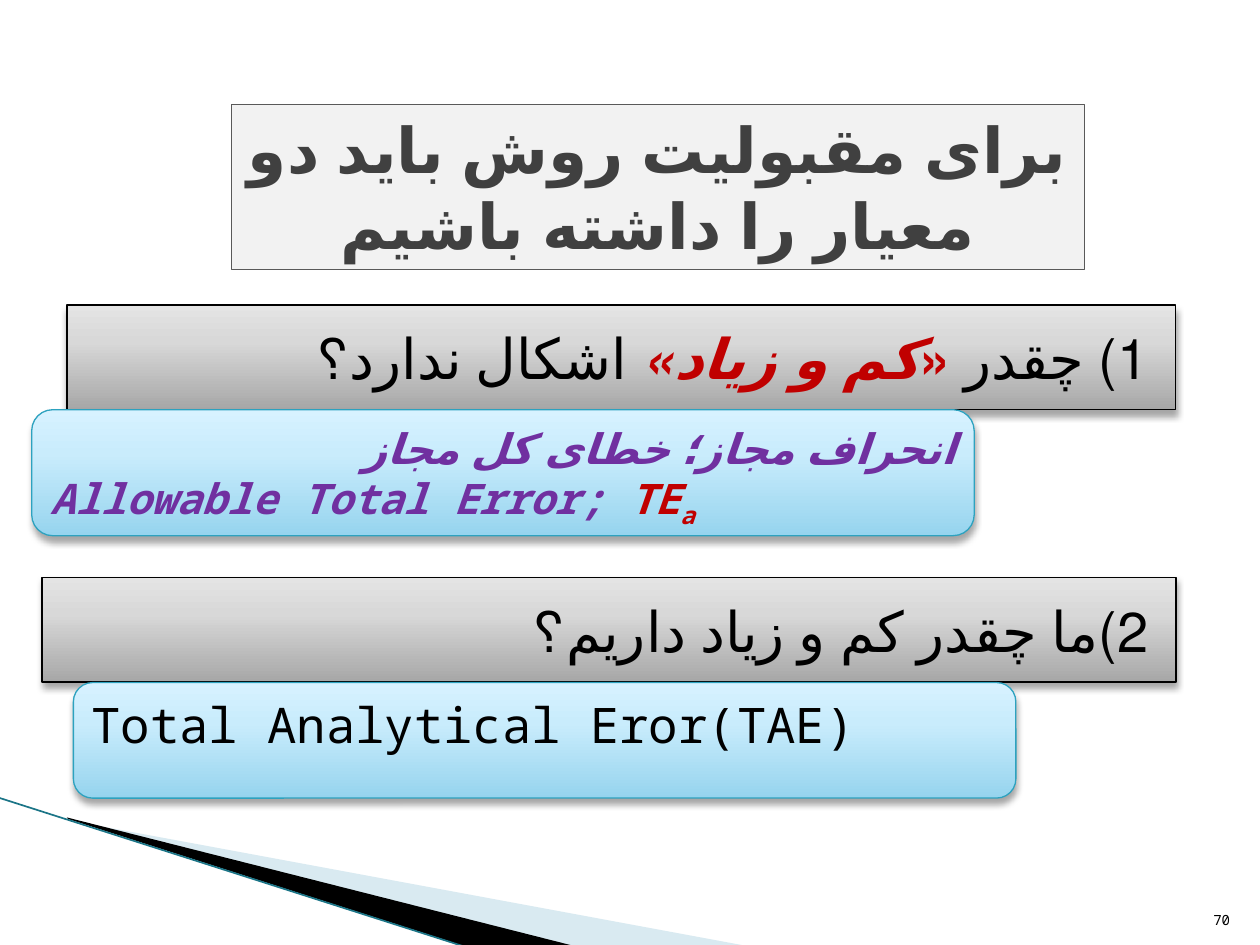
from copy import deepcopy

from lxml import etree
from pptx import Presentation
from pptx import util as u
from pptx.dml import color as dml
from pptx.enum import shapes, text
from pptx.oxml import ns

Cm = u.Cm
FONT = "Noto Sans Mono"
HEX = {
    "black": "000000", "red": "C00000", "purple": "7030A0", "dark": "404040",
    "edge": "595959", "pale": "F2F2F2", "teal": "2DA2BF", "sky": "A0CBDC",
    "line": "1B7587",
}
GRAY = [(0, "A7A7A7"), (0.65, "D8D8D8"), (1, "E4E4E4")]
BLUE = [(0, "96D4EE"), (0.65, "C9ECFC"), (1, "D7F2FF")]
LEFT, RIGHT, MID = text.PP_ALIGN.LEFT, text.PP_ALIGN.RIGHT, text.PP_ALIGN.CENTER
TOP, CENTER, BASE = (text.MSO_ANCHOR.TOP, text.MSO_ANCHOR.MIDDLE,
                     text.MSO_ANCHOR.BOTTOM)


def rgb(name):
    return dml.RGBColor.from_string(HEX[name])


def add_tag(parent, tag, **attrs):
    return etree.SubElement(parent, ns.qn(tag), attrs)


def place(shape, box):
    shape.left, shape.top, shape.width, shape.height = map(Cm, box)


def outline(shape, name):
    shape.line.color.rgb = rgb(name)
    shape.line.width = u.Pt(0.75)


def shade(shape, stops, edge):
    shape.fill.gradient()
    shape.fill.gradient_angle = 90
    items = shape._element.spPr.find(ns.qn("a:gradFill")).find(ns.qn("a:gsLst"))
    items.append(deepcopy(items[0]))
    for stop, (spot, tone) in zip(shape.fill.gradient_stops, stops):
        stop.position = spot
        stop.color.rgb = dml.RGBColor.from_string(tone)
    outline(shape, edge)
    shape.shadow.inherit = False
    effects = shape._element.spPr.find(ns.qn("a:effectLst"))
    cast = add_tag(effects, "a:outerShdw", blurRad="50800", dist="38100",
                   dir="5400000", rotWithShape="0")
    tone = add_tag(cast, "a:srgbClr", val=HEX["black"])
    add_tag(tone, "a:alpha", val="35000")


def set_frame(shape, anchor):
    frame = shape.text_frame
    frame.word_wrap = True
    frame.auto_size = text.MSO_AUTO_SIZE.NONE
    frame.vertical_anchor = anchor
    return frame


def write(para, runs, size, align, rtl=True, indent=0):
    props = para._p.get_or_add_pPr()
    props.set("marL", str(Cm(indent)))
    props.set("indent", "0")
    props.set("rtl", str(int(rtl)))
    add_tag(props, "a:buNone")
    para.alignment = align
    para.space_before = u.Pt(0)
    for words, tone, bold, slant in runs:
        run = para.add_run()
        run.text = words
        font = run.font
        font.name, font.size = FONT, u.Pt(size)
        font.bold, font.italic = bold, slant
        font.color.rgb = rgb(tone)
        font._element.set("lang", "fa-IR" if rtl else "en-US")


def add_box(slide, kind, box):
    return slide.shapes.add_shape(kind, *map(Cm, box))


def add_wedge(slide, points, tone, alpha=None):
    spots = [(Cm(x), Cm(y)) for x, y in points]
    maker = slide.shapes.build_freeform(*spots[0])
    maker.add_line_segments(spots[1:], close=True)
    wedge = maker.convert_to_shape()
    wedge.shadow.inherit = False
    wedge.fill.solid()
    wedge.fill.fore_color.rgb = rgb(tone)
    wedge.line.fill.background()
    if alpha:
        mark = wedge._element.spPr.find(ns.qn("a:solidFill"))[0]
        add_tag(mark, "a:alpha", val=str(alpha * 1000))


def add_corner(slide):
    add_wedge(slide, [(1.4, 16.54), (15.11, 19.08), (11.58, 19.08), (1.4, 16.51)],
              "sky", 40)
    add_wedge(slide, [(1.35, 16.48), (11.61, 19.08), (9.45, 19.1), (1.37, 16.51)],
              "black")
    ends = map(Cm, (-0.03, 16.08, 9.42, 19.1))
    line = slide.shapes.add_connector(shapes.MSO_CONNECTOR.STRAIGHT, *ends)
    line.line.color.rgb = rgb("line")
    line.line.width = u.Pt(0.95)
    add_tag(line._element.spPr, "a:effectLst")


def set_title(slide):
    title = slide.shapes.title
    place(title, (4.66, 2.11, 17.2, 3.33))
    title.fill.solid()
    title.fill.fore_color.rgb = rgb("pale")
    outline(title, "edge")
    words = "برای مقبولیت روش باید دو معیار را داشته باشیم"
    write(set_frame(title, TOP).paragraphs[0],
          [(words, "dark", True, False)], 36, MID)


def add_bar(bar, runs):
    shade(bar, GRAY, "black")
    write(set_frame(bar, CENTER).paragraphs[0], runs, 32, RIGHT, indent=0.3)


def add_card(slide, box):
    card = add_box(slide, shapes.MSO_SHAPE.ROUNDED_RECTANGLE, box)
    shade(card, BLUE, "teal")
    return set_frame(card, TOP)


def add_number(slide):
    box = slide.shapes.add_textbox(*map(Cm, (24.03, 17.81, 1.02, 1.02)))
    write(set_frame(box, BASE).paragraphs[0],
          [("70", "black", False, False)], 8, RIGHT, rtl=False)


def main():
    deck = Presentation()
    deck.slide_width, deck.slide_height = Cm(25.4), Cm(19.05)
    slide = deck.slides.add_slide(deck.slide_layouts[1])
    add_corner(slide)
    set_title(slide)

    body = slide.placeholders[1]
    place(body, (1.35, 6.15, 22.35, 2.11))
    add_bar(body, [("1) چقدر ", "black", False, False),
                   ("«", "red", True, False),
                   ("کم و زیاد» ", "red", True, True),
                   ("اشکال ندارد؟", "black", False, False)])
    limit = add_card(slide, (0.64, 8.26, 19, 2.54))
    write(limit.paragraphs[0],
          [("انحراف مجاز؛ خطای کل مجاز", "purple", True, True)], 24, RIGHT)
    error = limit.add_paragraph()
    write(error, [("Allowable Total Error; ", "purple", True, True),
                  ("TE", "red", True, True),
                  ("a", "red", True, True)], 24, LEFT, rtl=False)
    error.runs[-1].font._element.set("baseline", "-25000")

    second = add_box(slide, shapes.MSO_SHAPE.RECTANGLE, (0.85, 11.64, 22.86, 2.11))
    add_bar(second, [("2)ما چقدر کم و زیاد داریم؟", "black", False, False)])
    total = add_card(slide, (1.48, 13.76, 19, 2.33))
    write(total.paragraphs[0],
          [("Total Analytical Eror(TAE)", "black", False, False)], 28, LEFT)
    add_number(slide)
    deck.save("out.pptx")


if __name__ == "__main__":
    main()
